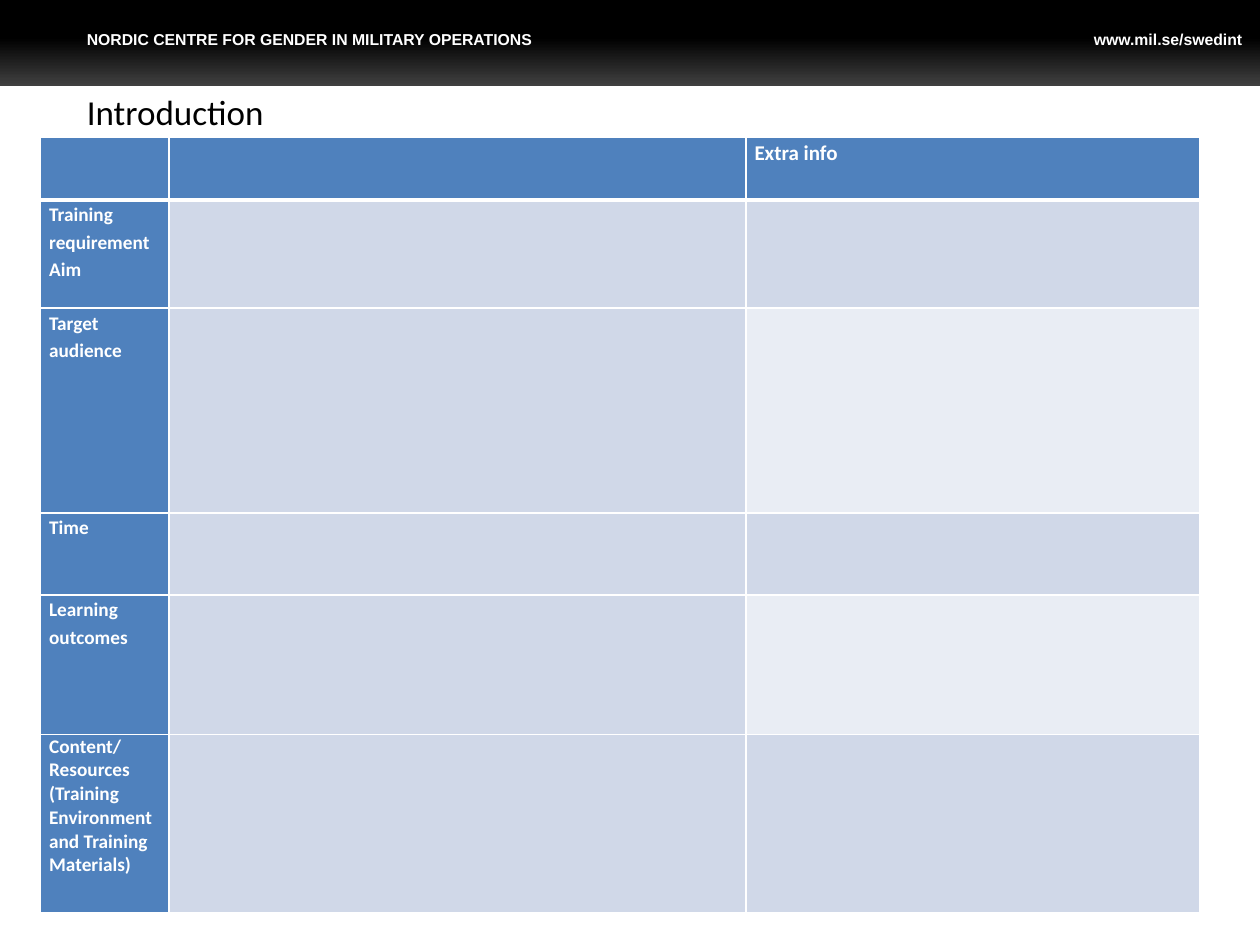
from typing import NamedTuple

from pptx import Presentation
from pptx.dml.color import RGBColor
from pptx.enum.shapes import MSO_SHAPE as Shape
from pptx.enum.text import MSO_ANCHOR as Anchor, PP_ALIGN as Align
from pptx.oxml import parse_xml
from pptx.oxml.ns import nsdecls
from pptx.util import Cm, Pt

WHITE, BLACK = "FFFFFF", "000000"
BLUE, MID, PALE = "4F81BD", "D0D8E8", "E9EDF4"


class Style(NamedTuple):
    font: str
    size: float
    tint: str
    bold: bool = True


class Label(NamedTuple):
    text: str
    left: float
    top: float
    width: float
    height: float
    style: Style
    align: Align = Align.LEFT
    anchor: Anchor = Anchor.TOP


class Row(NamedTuple):
    height: float
    lines: tuple[str, ...]
    space: float = 1.15


BAND = Style("Arial", 9, WHITE)
TITLE = Style("Calibri", 20, BLACK, False)
HEAD = Style("Calibri", 12, WHITE)
SIDE = Style("Calibri", 11, WHITE)

LABELS = (
    Label("NORDIC CENTRE FOR GENDER IN MILITARY OPERATIONS",
          1.5, 0.48, 9.96, 0.64, BAND),
    Label("www.mil.se/swedint", 15.29, 0.48, 10, 0.64, BAND, Align.RIGHT),
    Label("Introduction", 1.5, 1.73, 22, 1.02, TITLE, anchor=Anchor.MIDDLE),
)
COLS = (2.59, 11.63, 9.15)
ROWS = (
    Row(1.27, ()),
    Row(2.18, ("Training requirement Aim",)),
    Row(4.13, ("Target audience",)),
    Row(1.65, ("Time",)),
    Row(2.82, ("Learning outcomes",)),
    Row(3.59, ("Content/Resources",
               "(Training Environment and Training Materials)"), 1),
)


def color(code: str) -> RGBColor:
    return RGBColor.from_string(code)


def write(par, text: str, style: Style) -> None:
    run = par.add_run()
    run.text = text
    font = run.font
    font.name, font.size, font.bold = style.font, Pt(style.size), style.bold
    font.color.rgb = color(style.tint)


def add_band(slide) -> None:
    band = slide.shapes.add_shape(Shape.RECTANGLE, 0, 0, Cm(25.4), Cm(1.73))
    band.shadow.inherit = False
    band.line.fill.background()
    band.fill.gradient()
    band.fill.gradient_angle = 270
    for stop, (place, tint) in zip(band.fill.gradient_stops,
                                   ((0.44, BLACK), (1, "404040"))):
        stop.position = place
        stop.color.rgb = color(tint)


def add_label(slide, item: Label) -> None:
    box = slide.shapes.add_textbox(Cm(item.left), Cm(item.top),
                                   Cm(item.width), Cm(item.height))
    frame = box.text_frame
    frame.word_wrap = True
    frame.vertical_anchor = item.anchor
    par = frame.paragraphs[0]
    par.alignment = item.align
    write(par, item.text, item.style)


def edge(cell, side: str, width: float) -> None:
    cell._tc.get_or_add_tcPr().append(parse_xml(
        f'<a:ln{side} {nsdecls("a")} w="{Pt(width)}"><a:solidFill>'
        f'<a:srgbClr val="{WHITE}"/></a:solidFill></a:ln{side}>'))


def fill_cell(cell, lines: tuple[str, ...], style: Style, space: float) -> None:
    cell.margin_left = cell.margin_right = Cm(0.17)
    cell.margin_top = cell.margin_bottom = 0
    frame = cell.text_frame
    for num, line in enumerate(lines):
        par = frame.add_paragraph() if num else frame.paragraphs[0]
        par.line_spacing = space
        write(par, line, style)


def shade(row: int, col: int) -> str:
    """Blue heads, pale last column on every second body row."""
    if row == 0 or col == 0:
        return BLUE
    return PALE if col == 2 and row % 2 == 0 else MID


def add_grid(slide) -> None:
    table = slide.shapes.add_table(
        len(ROWS), len(COLS), Cm(0.82), Cm(2.76),
        Cm(sum(COLS)), Cm(sum(row.height for row in ROWS))).table
    for col, width in zip(table.columns, COLS):
        col.width = Cm(width)
    for r, row in enumerate(ROWS):
        table.rows[r].height = Cm(row.height)
        for c in range(len(COLS)):
            cell = table.cell(r, c)
            for side in "LRTB":
                thick = (r, side) in ((0, "B"), (1, "T"))
                edge(cell, side, 3 if thick else 1)
            cell.fill.solid()
            cell.fill.fore_color.rgb = color(shade(r, c))
        fill_cell(table.cell(r, 0), row.lines, SIDE, row.space)
    fill_cell(table.cell(0, 2), ("Extra info",), HEAD, 1.15)


def main() -> None:
    deck = Presentation()
    deck.slide_width, deck.slide_height = Cm(25.4), Cm(19.05)
    slide = deck.slides.add_slide(deck.slide_layouts[6])
    add_band(slide)
    for item in LABELS:
        add_label(slide, item)
    add_grid(slide)
    deck.save("out.pptx")


if __name__ == "__main__":
    main()
